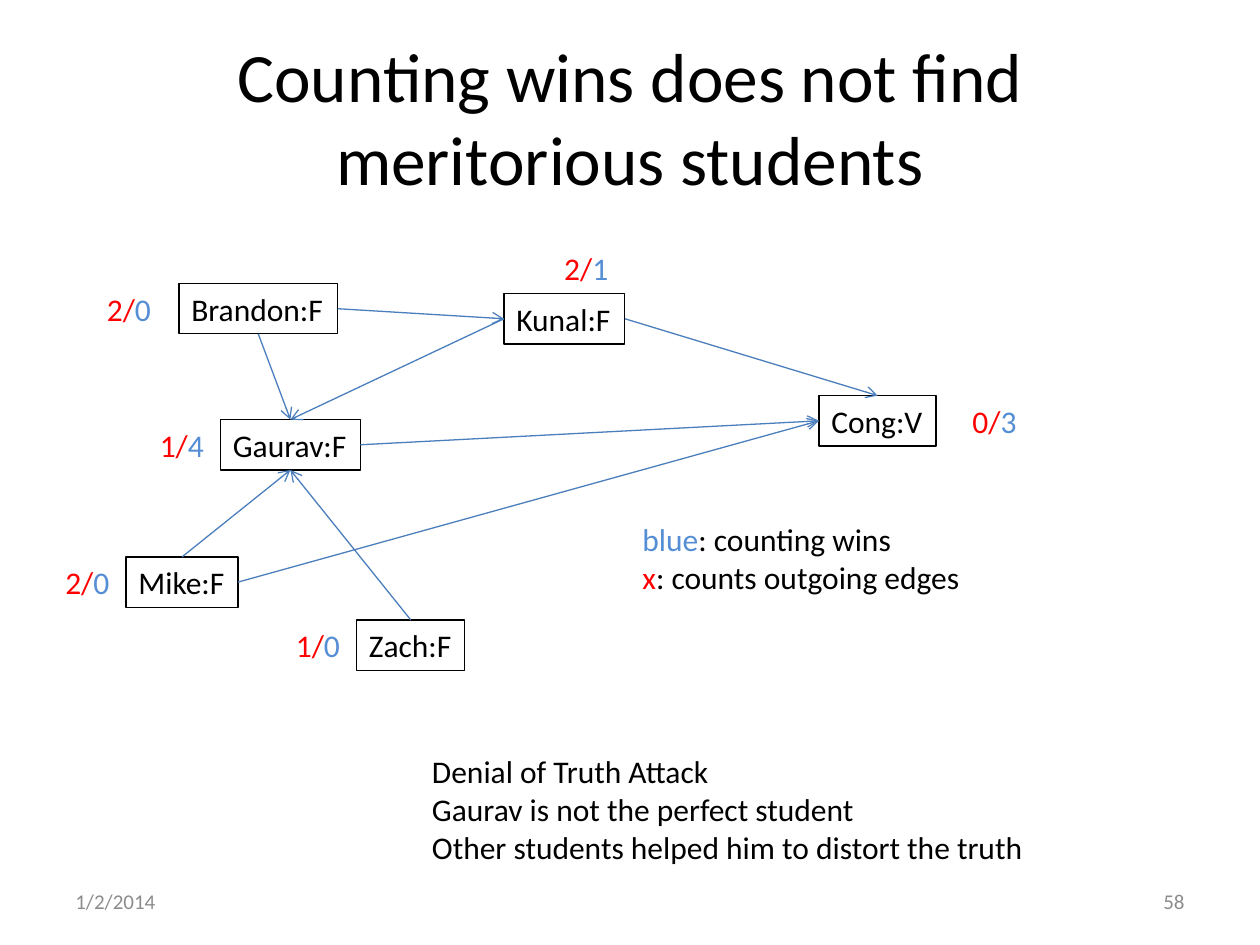
from lxml.etree import SubElement
from pptx import Presentation
from pptx.dml.color import RGBColor
from pptx.enum.shapes import MSO_CONNECTOR, MSO_SHAPE
from pptx.enum.text import MSO_ANCHOR, MSO_AUTO_SIZE, PP_ALIGN
from pptx.oxml.ns import qn
from pptx.util import Inches, Pt

BLACK = RGBColor(0x00, 0x00, 0x00)
RED = RGBColor(0xFF, 0x00, 0x00)
BLUE = RGBColor(0x55, 0x8E, 0xD5)
EDGE = RGBColor(0x4B, 0x7E, 0xBC)
GRAY = RGBColor(0x8C, 0x8C, 0x8C)
FONT = "Calibri"
TOP, LEFT, BOTTOM, RIGHT = range(4)
ROW, SCORE_WIDTH = 0.4, 0.56

TITLE = "Counting wins does not find meritorious students"
STUDENTS = {
    "Brandon:F": (1.42, 2.25, 1.26),
    "Kunal:F": (4, 2.33, 0.96),
    "Gaurav:F": (1.75, 3.33, 1.11),
    "Cong:V": (6.5, 3.14, 0.93),
    "Mike:F": (1, 4.42, 0.89),
    "Zach:F": (2.83, 4.92, 0.86),
}
EDGES = [
    ("Kunal:F", RIGHT, "Cong:V", TOP),
    ("Gaurav:F", RIGHT, "Cong:V", LEFT),
    ("Kunal:F", LEFT, "Gaurav:F", TOP),
    ("Brandon:F", BOTTOM, "Gaurav:F", TOP),
    ("Mike:F", TOP, "Gaurav:F", BOTTOM),
    ("Zach:F", TOP, "Gaurav:F", BOTTOM),
    ("Mike:F", RIGHT, "Cong:V", LEFT),
    ("Brandon:F", RIGHT, "Kunal:F", LEFT),
]
SCORES = [
    ("2/", "0", 0.75, 2.25),
    ("2/", "1", 4.38, 1.93),
    ("1/", "4", 1.17, 3.33),
    ("0/", "3", 7.62, 3.14),
    ("2/", "0", 0.42, 4.42),
    ("1/", "0", 2.25, 4.92),
]
LEGEND = [
    [("blue", BLUE), (": counting wins", BLACK)],
    [("x", RED), (": counts outgoing edges", BLACK)],
]
CONCLUSION = [
    "Denial of Truth Attack",
    "Gaurav is not the perfect student",
    "Other students helped him to distort the truth",
]
FOOTERS = [("1/2/2014", 0.5, PP_ALIGN.LEFT), ("58", 7.17, PP_ALIGN.RIGHT)]


def place(shape, left, top, width, height):
    shape.left, shape.top = Inches(left), Inches(top)
    shape.width, shape.height = Inches(width), Inches(height)


def write(shape, lines, size=18, align=PP_ALIGN.LEFT, anchor=MSO_ANCHOR.TOP, wrap=False):
    frame = shape.text_frame
    frame.word_wrap = wrap
    frame.auto_size = MSO_AUTO_SIZE.NONE if wrap else MSO_AUTO_SIZE.SHAPE_TO_FIT_TEXT
    frame.vertical_anchor = anchor
    for index, line in enumerate(lines):
        para = frame.add_paragraph() if index else frame.paragraphs[0]
        para.alignment = align
        para.font.name, para.font.size = FONT, Pt(size)
        for text, color in line:
            span = para.add_run()
            span.text = text
            span.font.color.rgb = color


def add_text(page, spot, lines, **style):
    box = page.shapes.add_textbox(*map(Inches, spot))
    write(box, lines, **style)


def add_student(page, name, left, top, width):
    box = page.shapes.add_shape(MSO_SHAPE.RECTANGLE, *map(Inches, (left, top, width, ROW)))
    box.shadow.inherit = False
    box.fill.background()
    box.line.color.rgb = BLACK
    box.line.width = Pt(0.75)
    write(box, [[(name, BLACK)]])
    return box


def add_edge(page, source, source_side, target, target_side):
    edge = page.shapes.add_connector(MSO_CONNECTOR.STRAIGHT, 0, 0, 0, 0)
    edge.begin_connect(source, source_side)
    edge.end_connect(target, target_side)
    edge.line.color.rgb = EDGE
    edge.line.width = Pt(0.75)
    SubElement(edge.line._get_or_add_ln(), qn("a:tailEnd"), type="arrow")
    SubElement(edge._element.spPr, qn("a:effectLst"))


def main():
    deck = Presentation()
    deck.slide_width, deck.slide_height = Inches(10), Inches(7.5)
    page = deck.slides.add_slide(deck.slide_layouts[5])

    title = page.shapes.title
    place(title, 0.5, 0.3, 9, 1.25)
    write(title, [[(TITLE, BLACK)]], size=39.6, align=PP_ALIGN.CENTER,
          anchor=MSO_ANCHOR.MIDDLE, wrap=True)

    boxes = {name: add_student(page, name, *spot) for name, spot in STUDENTS.items()}
    for source, source_side, target, target_side in EDGES:
        add_edge(page, boxes[source], source_side, boxes[target], target_side)
    for outgoing, wins, left, top in SCORES:
        add_text(page, (left, top, SCORE_WIDTH, ROW), [[(outgoing, RED), (wins, BLUE)]])

    add_text(page, (5, 4.08, 2.75, 0.71), LEGEND)
    add_text(page, (3.33, 5.92, 4.95, 1.01), [[(line, BLACK)] for line in CONCLUSION])
    for text, left, align in FOOTERS:
        add_text(page, (left, 6.95, 2.33, ROW), [[(text, GRAY)]], size=12,
                 align=align, anchor=MSO_ANCHOR.MIDDLE, wrap=True)

    deck.save("out.pptx")


if __name__ == "__main__":
    main()
